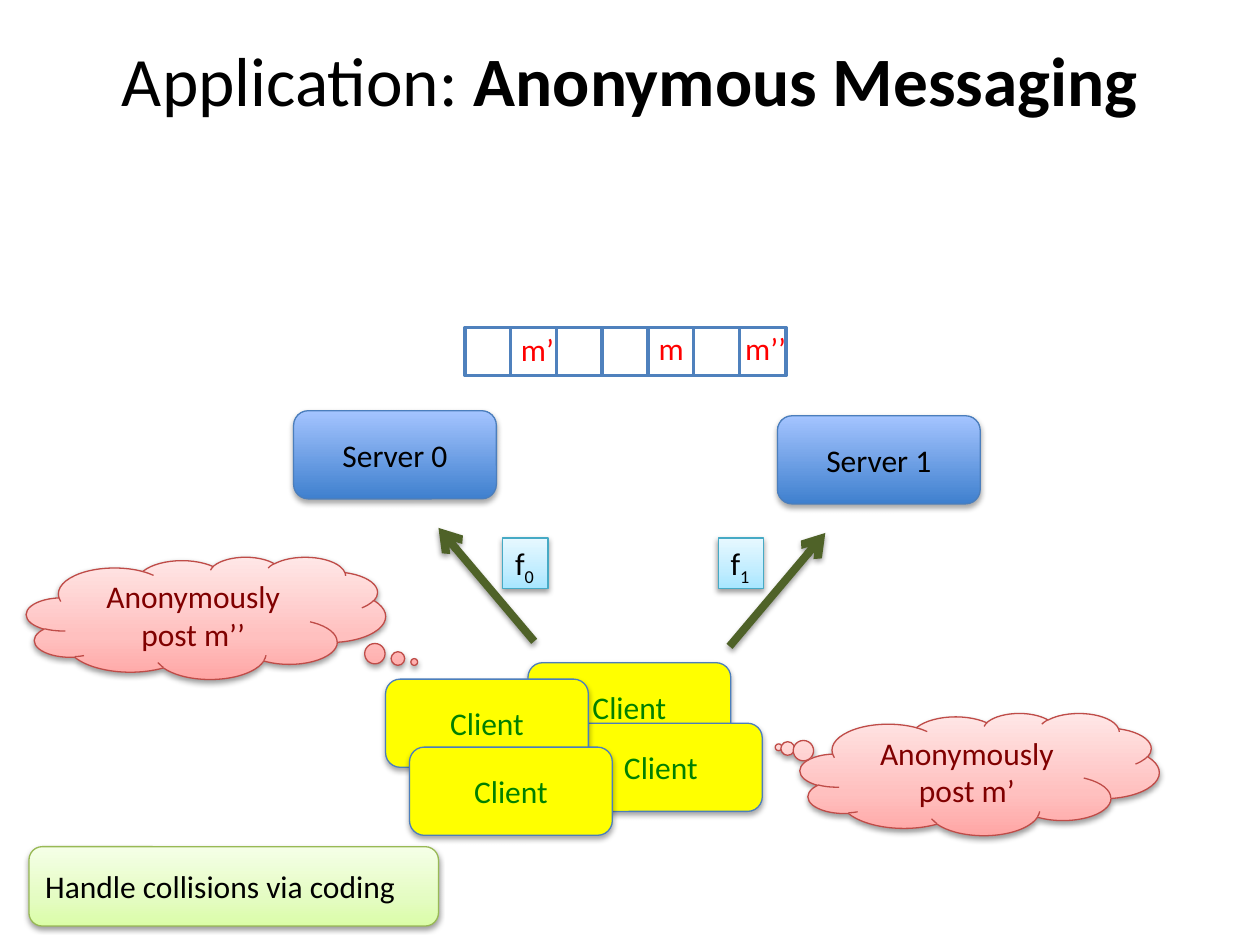
from lxml import etree
from pptx import Presentation, util as u
from pptx.dml.color import RGBColor
from pptx.enum import shapes, text
from pptx.oxml import ns

HUES = {
    "black": "000000", "white": "FFFFFF", "red": "FF0000", "green": "008000",
    "maroon": "800000", "yellow": "FFFF00", "olive": "4F6228",
    "edge": "4B7EBC", "cell": "4F81BD", "rose": "BF4C48",
    "aqua": "46AAC5", "lime": "98B955",
}
FADES = {
    "blue": {0: "3F80CE", 100: "A4C4FF"},
    "rose": {0: "FFA6A5", 35: "FFC0BF", 100: "FFE7E7"},
    "aqua": {0: "A7E6FF", 35: "C1EDFF", 100: "E7F8FF"},
    "lime": {0: "DAFDA7", 35: "E4FCC2", 100: "F5FFE7"},
}
KINDS = shapes.MSO_SHAPE
MID = text.PP_ALIGN.CENTER
LEFT = text.PP_ALIGN.LEFT
COLS, ROWS = 100, 75


def hue(name):
    return RGBColor.from_string(HUES[name])


def node(top, tag, **attrs):
    return etree.SubElement(top, ns.qn(tag), {k: str(v) for k, v in attrs.items()})


class Deck:
    font = "Calibri"
    size = 18

    def __init__(self):
        self.prs = Presentation()
        self.prs.slide_width, self.prs.slide_height = u.Inches(10), u.Inches(7.5)
        self.slide = self.prs.slides.add_slide(self.prs.slide_layouts[5])

    def grid(self, x, y):
        return (int(self.prs.slide_width * x / COLS),
                int(self.prs.slide_height * y / ROWS))

    def place(self, x, y, wide, high):
        return *self.grid(x, y), *self.grid(wide, high)

    def run(self, para, words, color="black", size=None, bold=None, base=None):
        run = para.add_run()
        run.text = words
        run.font.name = self.font
        run.font.size = u.Pt(size or self.size)
        run.font.bold = bold
        run.font.color.rgb = hue(color)
        if base:
            run.font._element.set("baseline", str(base * 1000))

    def title(self, *box, runs):
        hold = self.slide.shapes.title
        hold.left, hold.top, hold.width, hold.height = self.place(*box)
        frame = hold.text_frame
        frame.vertical_anchor = text.MSO_ANCHOR.MIDDLE
        para = frame.paragraphs[0]
        para.alignment = MID
        for words, bold in runs:
            self.run(para, words, size=39.6, bold=bold)

    def fade(self, shape, name):
        shape.fill.gradient()
        shape.fill.gradient_angle = 90
        stops = shape._element.spPr.find(".//" + ns.qn("a:gsLst"))
        stops[:] = []
        for pos, color in FADES[name].items():
            node(node(stops, "a:gs", pos=pos * 1000), "a:srgbClr", val=color)

    def shade(self, item, dark=38, drop=1.6):
        area = item._element.spPr
        casts = area.find(ns.qn("a:effectLst"))
        if casts is None:
            casts = node(area, "a:effectLst")
        cast = node(casts, "a:outerShdw", blurRad=u.Pt(3.15), dist=u.Pt(drop),
                    dir=5400000, rotWithShape=0)
        color = node(cast, "a:srgbClr", val=HUES["black"])
        node(color, "a:alpha", val=dark * 1000)

    def shape(self, kind, *box, fill, line, width=0.75, dark=None, drop=1.6):
        item = self.slide.shapes.add_shape(kind, *self.place(*box))
        item.shadow.inherit = False
        if fill in FADES:
            self.fade(item, fill)
        else:
            item.fill.solid()
            item.fill.fore_color.rgb = hue(fill)
        item.line.color.rgb = hue(line)
        item.line.width = u.Pt(width)
        if dark:
            self.shade(item, dark, drop)
        return item

    def say(self, item, words, color="black", align=MID):
        frame = item.text_frame
        frame.vertical_anchor = text.MSO_ANCHOR.MIDDLE
        para = frame.paragraphs[0]
        para.alignment = align
        self.run(para, words, color)

    def host(self, x, y, words, fill, color):
        item = self.shape(KINDS.ROUNDED_RECTANGLE, x, y, 16.1, 7, fill=fill,
                          line="edge", dark=35, drop=1.8)
        self.say(item, words, color)

    def cloud(self, x, y, words, tip):
        item = self.shape(KINDS.CLOUD_CALLOUT, x, y, 28.5, 9.7, fill="rose",
                          line="rose", dark=38)
        item.adjustments[0], item.adjustments[1] = tip
        self.say(item, words, "maroon")

    def note(self, *box, words):
        item = self.shape(KINDS.ROUNDED_RECTANGLE, *box, fill="lime",
                          line="lime", dark=38)
        self.say(item, words, align=LEFT)

    def fit(self, frame):
        frame.word_wrap = False
        frame.auto_size = text.MSO_AUTO_SIZE.SHAPE_TO_FIT_TEXT
        frame.vertical_anchor = text.MSO_ANCHOR.TOP
        para = frame.paragraphs[0]
        para.alignment = LEFT
        return para

    def share(self, x, y, sub):
        item = self.shape(KINDS.RECTANGLE, x, y, 3.6, 4, fill="aqua",
                          line="aqua", dark=38)
        para = self.fit(item.text_frame)
        self.run(para, "f")
        self.run(para, sub, base=-25)

    def label(self, *box, words):
        item = self.slide.shapes.add_textbox(*self.place(*box))
        self.run(self.fit(item.text_frame), words, "red")

    def arrow(self, start, end):
        item = self.slide.shapes.add_connector(
            shapes.MSO_CONNECTOR.STRAIGHT, *self.grid(*start), *self.grid(*end))
        item.line.color.rgb = hue("olive")
        item.line.width = u.Pt(4.5)
        node(item._element.spPr.find(ns.qn("a:ln")), "a:tailEnd", type="arrow")
        self.shade(item)

    def cells(self, x, y, count, step):
        for i in range(count):
            self.shape(KINDS.RECTANGLE, x + i * step, y, 3.7, 3.8,
                       fill="white", line="cell", width=2)


def main():
    deck = Deck()
    deck.title(5, 0, 90, 12.5,
               runs=[("Application: ", None), ("Anonymous Messaging", True)])

    for i, (x, y) in enumerate([(23.3, 32.6), (61.7, 33)]):
        deck.host(x, y, f"Server {i}", "blue", "black")

    deck.arrow((42.4, 50.9), (34.8, 41.9))
    deck.arrow((57.9, 51.3), (65.5, 42.3))
    for i, x in enumerate([39.9, 57]):
        deck.share(x, 42.7, str(i))

    deck.cells(36.9, 26, 7, 3.63)
    deck.label(51.3, 25.6, 4, 4, words="m")
    deck.label(39.8, 25.7, 5.2, 4, words=" m’")
    deck.label(57.6, 25.6, 5.9, 4, words=" m’’")

    for x, y in [(41.9, 52.6), (44.4, 57.4), (30.6, 53.9), (32.5, 59.3)]:
        deck.host(x, y, "Client", "yellow", "green")

    deck.cloud(63.5, 56.6, "Anonymously post m’", (-0.56, -0.22))
    deck.cloud(2.1, 44.2, "Anonymously post m’’", (0.58, 0.36))
    deck.note(2.3, 67.2, 32.5, 6.3, words="Handle collisions via coding")
    deck.prs.save("out.pptx")


if __name__ == "__main__":
    main()
